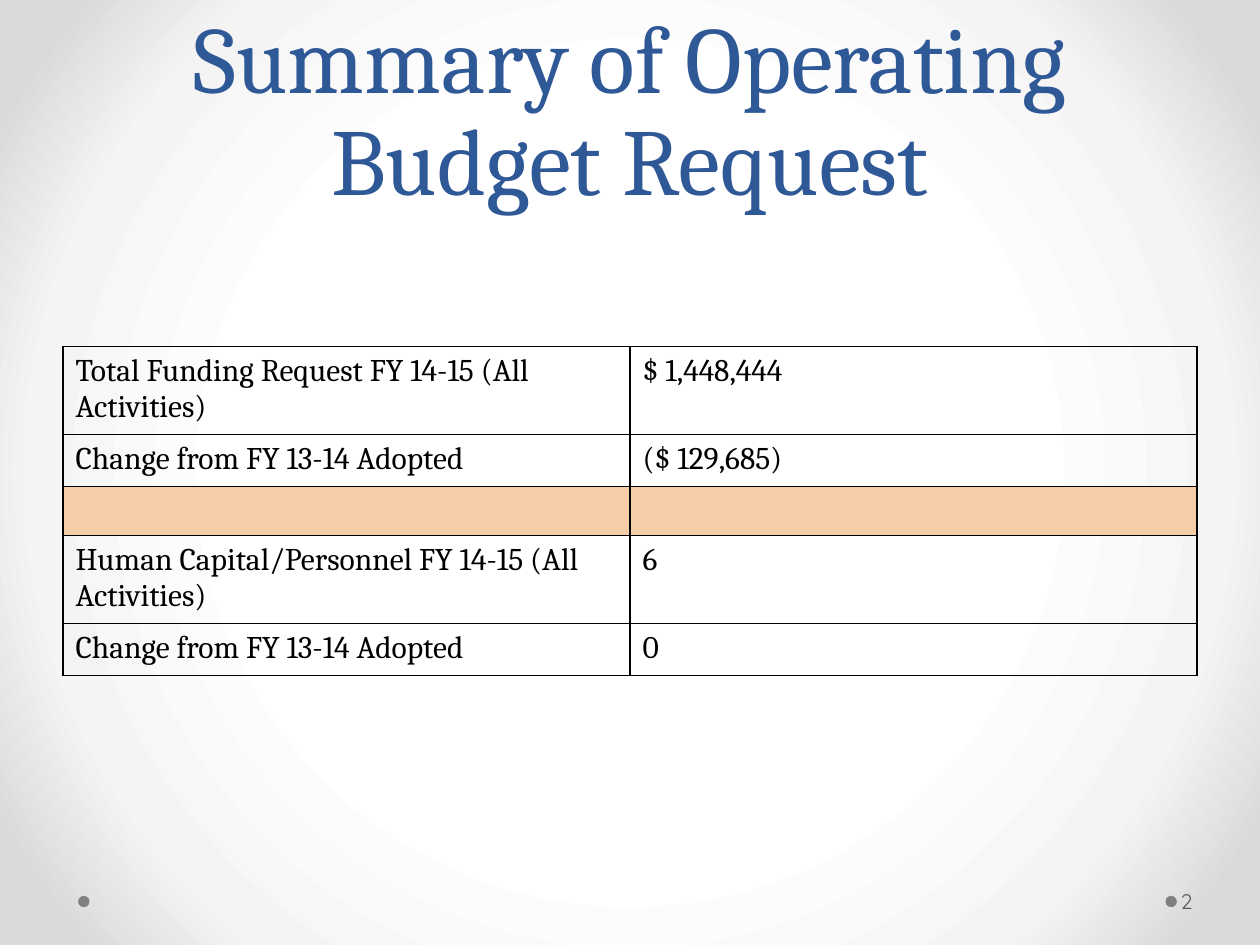
import lxml.etree
import pptx
import pptx.dml.color
import pptx.enum.shapes
import pptx.enum.text
import pptx.oxml
import pptx.oxml.ns
import pptx.util

WIDTH, HEIGHT = 10, 7.5
MARGIN = WIDTH * 0.05
CONTENT_WIDTH = WIDTH - 2 * MARGIN
ROW_HEIGHT, SPACER_HEIGHT = 0.41, 0.39
COLORS = {
    "title": "2F5897",
    "text": "000000",
    "border": "000000",
    "spacer": "F5CEA7",
    "dot": "808080",
    "number": "595959",
}
BACKGROUND_STOPS = [(50, "FFFFFF"), (76, "F4F4F4"), (92, "DADADA")]
BUDGET_ROWS = [
    ("Total Funding Request FY 14-15 (All Activities)", "$ 1,448,444"),
    ("Change from FY 13-14 Adopted", "($ 129,685)"),
    None,  # coloured spacer row
    ("Human Capital/Personnel FY 14-15 (All Activities)", "6"),
    ("Change from FY 13-14 Adopted", "0"),
]


def inches(*lengths):
    return [pptx.util.Inches(length) for length in lengths]


def color(name):
    return pptx.dml.color.RGBColor.from_string(COLORS[name])


def format_runs(text_frame, font_name, size, color_name):
    for paragraph in text_frame.paragraphs:
        for run in paragraph.runs:
            run.font.name = font_name
            run.font.size = pptx.util.Pt(size)
            run.font.color.rgb = color(color_name)


def set_background(slide):
    stops = "".join(
        f'<a:gs pos="{position * 1000}"><a:srgbClr val="{value}"/></a:gs>'
        for position, value in BACKGROUND_STOPS
    )
    background = pptx.oxml.parse_xml(
        f'<p:bg {pptx.oxml.ns.nsdecls("p", "a")}><p:bgPr>'
        f'<a:gradFill rotWithShape="1"><a:gsLst>{stops}</a:gsLst>'
        '<a:path path="circle">'
        '<a:fillToRect l="50000" t="50000" r="50000" b="50000"/></a:path>'
        "</a:gradFill><a:effectLst/></p:bgPr></p:bg>"
    )
    slide.element.cSld.insert(0, background)


def add_dot(slide, left):
    dot = slide.shapes.add_shape(
        pptx.enum.shapes.MSO_SHAPE.OVAL, *inches(left, 7.11, 0.09, 0.09)
    )
    dot.shadow.inherit = False
    dot.fill.solid()
    dot.fill.fore_color.rgb = color("dot")
    dot.line.fill.background()


def add_text(slide, box, text, font_name, size, color_name, anchor):
    text_frame = slide.shapes.add_textbox(*inches(*box)).text_frame
    text_frame.word_wrap = True
    text_frame.vertical_anchor = anchor
    text_frame.text = text
    format_runs(text_frame, font_name, size, color_name)
    return text_frame


def set_borders(cell):
    properties = cell._tc.get_or_add_tcPr()
    for index, side in enumerate(("lnL", "lnR", "lnT", "lnB")):
        border = pptx.oxml.parse_xml(
            f'<a:{side} {pptx.oxml.ns.nsdecls("a")} w="{pptx.util.Pt(1)}">'
            f'<a:solidFill><a:srgbClr val="{COLORS["border"]}"/></a:solidFill>'
            f"</a:{side}>"
        )
        properties.insert(index, border)


def add_budget_table(slide):
    heights = [ROW_HEIGHT if row else SPACER_HEIGHT for row in BUDGET_ROWS]
    table = slide.shapes.add_table(
        len(BUDGET_ROWS), 2, *inches(MARGIN, 2.75, CONTENT_WIDTH, sum(heights))
    ).table
    table.first_row = False
    table.horz_banding = False
    for row, height, texts in zip(table.rows, heights, BUDGET_ROWS):
        row.height = pptx.util.Inches(height)
        for column, cell in enumerate(row.cells):
            if texts:
                cell.fill.background()
                cell.text_frame.text = texts[column]
                format_runs(cell.text_frame, "Cambria", 18, "text")
            else:
                cell.fill.solid()
                cell.fill.fore_color.rgb = color("spacer")
                cell.margin_top = cell.margin_bottom = 0
            set_borders(cell)


def main():
    presentation = pptx.Presentation()
    presentation.slide_width, presentation.slide_height = inches(WIDTH, HEIGHT)
    slide = presentation.slides.add_slide(presentation.slide_layouts[6])
    anchors = pptx.enum.text.MSO_ANCHOR

    # Background and footer dots
    set_background(slide)
    for left in (9.25, 0.62):
        add_dot(slide, left)

    # Title
    title = add_text(
        slide, (MARGIN, 0, CONTENT_WIDTH, 1.75),
        "Summary of Operating Budget Request",
        "Cambria", 54, "title", anchors.BOTTOM,
    )
    title.paragraphs[0].alignment = pptx.enum.text.PP_ALIGN.CENTER
    title.paragraphs[0].line_spacing = pptx.util.Pt(58)

    # Budget figures
    add_budget_table(slide)

    # Slide number
    number = add_text(
        slide, (9.34, 6.95, 0.61, 0.4), "2",
        "Quicksand", 12, "number", anchors.MIDDLE,
    )
    number.margin_left, number.margin_right = inches(0.03, 0.05)

    presentation.save("out.pptx")


if __name__ == "__main__":
    main()
